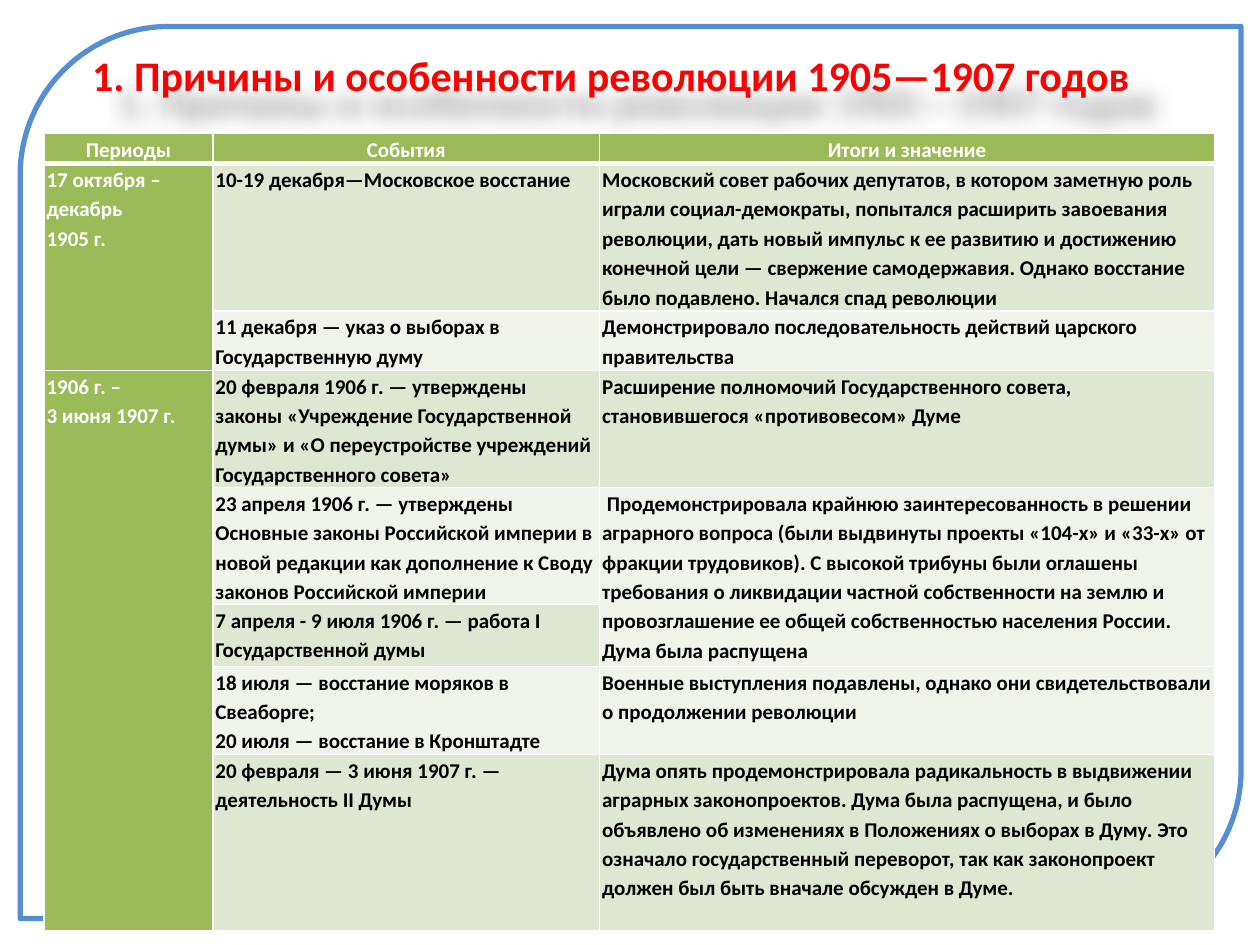
from dataclasses import dataclass

from lxml.etree import SubElement
from pptx import Presentation
from pptx.dml.color import RGBColor
from pptx.enum.shapes import MSO_SHAPE
from pptx.enum.text import MSO_ANCHOR, PP_ALIGN
from pptx.oxml.ns import qn
from pptx.util import Inches, Pt


@dataclass(frozen=True)
class Theme:
    font: str = "Calibri"
    title_size: int = 24
    table_size: int = 12
    title: str = "FF0000"
    border: str = "558ED5"
    accent: str = "9BBB59"
    bands: tuple = ("DEE7D1", "EFF3EA")
    light: str = "FFFFFF"
    dark: str = "000000"


THEME = Theme()
COLUMN_WIDTHS = (1.34, 3.07, 4.88)
ROW_HEIGHTS = (0.24, 1.17, 0.47, 0.93, 0.93, 0.49, 0.7, 1.4)
HEADINGS = ("Периоды", "События", "Итоги и значение")
PERIODS = {
    1: (2, "17 октября –\nдекабрь\n1905 г."),
    3: (5, "1906 г. –\n3 июня 1907 г."),
}
EVENTS = (
    "10-19 декабря—Московское восстание",
    "11 декабря — указ о выборах в Государственную думу",
    "20 февраля 1906 г. — утверждены законы «Учреждение Государственной думы» "
    "и «О переустройстве учреждений Государственного совета»",
    "23 апреля 1906 г. — утверждены Основные законы Российской империи в новой "
    "редакции как дополнение к Своду законов Российской империи",
    "7 апреля - 9 июля 1906 г. — работа I Государственной думы",
    "18 июля — восстание моряков в Свеаборге;\n20 июля — восстание в Кронштадте",
    "20 февраля — 3 июня 1907 г. — деятельность II Думы",
)
RESULTS = {
    1: (1, "Московский совет рабочих депутатов, в котором заметную роль играли "
           "социал-демократы, попытался расширить завоевания революции, дать новый "
           "импульс к ее развитию и достижению конечной цели — свержение "
           "самодержавия. Однако восстание было подавлено. Начался спад революции"),
    2: (1, "Демонстрировало последовательность действий царского правительства"),
    3: (1, "Расширение полномочий Государственного совета, становившегося "
           "«противовесом» Думе"),
    4: (2, " Продемонстрировала крайнюю заинтересованность в решении аграрного "
           "вопроса (были выдвинуты проекты «104-х» и «33-х» от фракции трудовиков). "
           "С высокой трибуны были оглашены требования о ликвидации частной "
           "собственности на землю и провозглашение ее общей собственностью "
           "населения России. Дума была распущена"),
    6: (1, "Военные выступления подавлены, однако они свидетельствовали о "
           "продолжении революции"),
    7: (1, "Дума опять продемонстрировала радикальность в выдвижении аграрных "
           "законопроектов. Дума была распущена, и было объявлено об изменениях в "
           "Положениях о выборах в Думу. Это означало государственный переворот, так "
           "как законопроект должен был быть вначале обсужден в Думе."),
}


def style(paragraph, size, color, align=PP_ALIGN.LEFT):
    paragraph.alignment = align
    font = paragraph.font
    font.name, font.size, font.bold = THEME.font, Pt(size), True
    font.color.rgb = RGBColor.from_string(color)


def add_frame(slide):
    frame = slide.shapes.add_shape(
        MSO_SHAPE.ROUND_2_DIAG_RECTANGLE,
        Inches(0.16), Inches(0.21), Inches(9.69), Inches(7.08))
    frame.shadow.inherit = False
    frame.fill.background()
    frame.line.color.rgb = RGBColor.from_string(THEME.border)
    frame.line.width = Pt(3)


def add_soft_shadow(shape):
    effects = SubElement(shape._element.spPr, qn("a:effectLst"))
    shadow = SubElement(effects, qn("a:outerShdw"), blurRad=str(Pt(12)),
                        dist=str(Pt(20)), dir="2700000", algn="tl", rotWithShape="0")
    color = SubElement(shadow, qn("a:srgbClr"), val=THEME.dark)
    SubElement(color, qn("a:alpha"), val="40000")


def add_title(slide, text):
    title = slide.shapes.add_textbox(Inches(0.35), Inches(0.36), Inches(9), Inches(0.47))
    title.text_frame.word_wrap = True
    title.text_frame.vertical_anchor = MSO_ANCHOR.MIDDLE
    title.text_frame.text = text
    style(title.text_frame.paragraphs[0], THEME.title_size, THEME.title, PP_ALIGN.CENTER)
    add_soft_shadow(title)


def set_borders(cell, bottom=1):
    properties = cell._tc.get_or_add_tcPr()
    edges = (("lnL", 1), ("lnR", 1), ("lnT", 1), ("lnB", bottom))
    for position, (edge, width) in enumerate(edges):
        line = properties.makeelement(qn(f"a:{edge}"), {"w": str(Pt(width))})
        fill = SubElement(line, qn("a:solidFill"))
        SubElement(fill, qn("a:srgbClr"), val=THEME.light)
        properties.insert(position, line)


def fill_cell(cell, text, fill, color, align=PP_ALIGN.LEFT):
    cell.text = text
    for paragraph in cell.text_frame.paragraphs:
        paragraph.line_spacing = 1.15
        style(paragraph, THEME.table_size, color, align)
    cell.fill.solid()
    cell.fill.fore_color.rgb = RGBColor.from_string(fill)


def fill_spans(table, column, entries, fill_for, color):
    for row, (span, text) in entries.items():
        cell = table.cell(row, column)
        if span > 1:
            cell.merge(table.cell(row + span - 1, column))
        fill_cell(cell, text, fill_for(row), color)


def band(row):
    return THEME.bands[(row - 1) % 2]


def add_chronology(slide):
    table = slide.shapes.add_table(
        len(ROW_HEIGHTS), len(COLUMN_WIDTHS), Inches(0.35), Inches(1.06),
        Inches(sum(COLUMN_WIDTHS)), Inches(sum(ROW_HEIGHTS))).table
    for column, width in zip(table.columns, COLUMN_WIDTHS):
        column.width = Inches(width)
    for index, (row, height) in enumerate(zip(table.rows, ROW_HEIGHTS)):
        row.height = Inches(height)
        for cell in row.cells:
            cell.margin_left = cell.margin_right = Inches(0.02)
            cell.margin_top = cell.margin_bottom = 0
            set_borders(cell, 1 if index else 3)
    for column, heading in enumerate(HEADINGS):
        fill_cell(table.cell(0, column), heading, THEME.accent, THEME.light, PP_ALIGN.CENTER)
    events = {row: (1, text) for row, text in enumerate(EVENTS, 1)}
    fill_spans(table, 0, PERIODS, lambda row: THEME.accent, THEME.light)
    fill_spans(table, 1, events, band, THEME.dark)
    fill_spans(table, 2, RESULTS, band, THEME.dark)


def main():
    """Build the slide on the periods of the 1905–1907 revolution."""
    deck = Presentation()
    deck.slide_width, deck.slide_height = Inches(10), Inches(7.5)
    slide = deck.slides.add_slide(deck.slide_layouts[6])
    add_frame(slide)
    add_title(slide, "1. Причины и особенности революции 1905—1907 годов")
    add_chronology(slide)
    deck.save("out.pptx")


if __name__ == "__main__":
    main()
